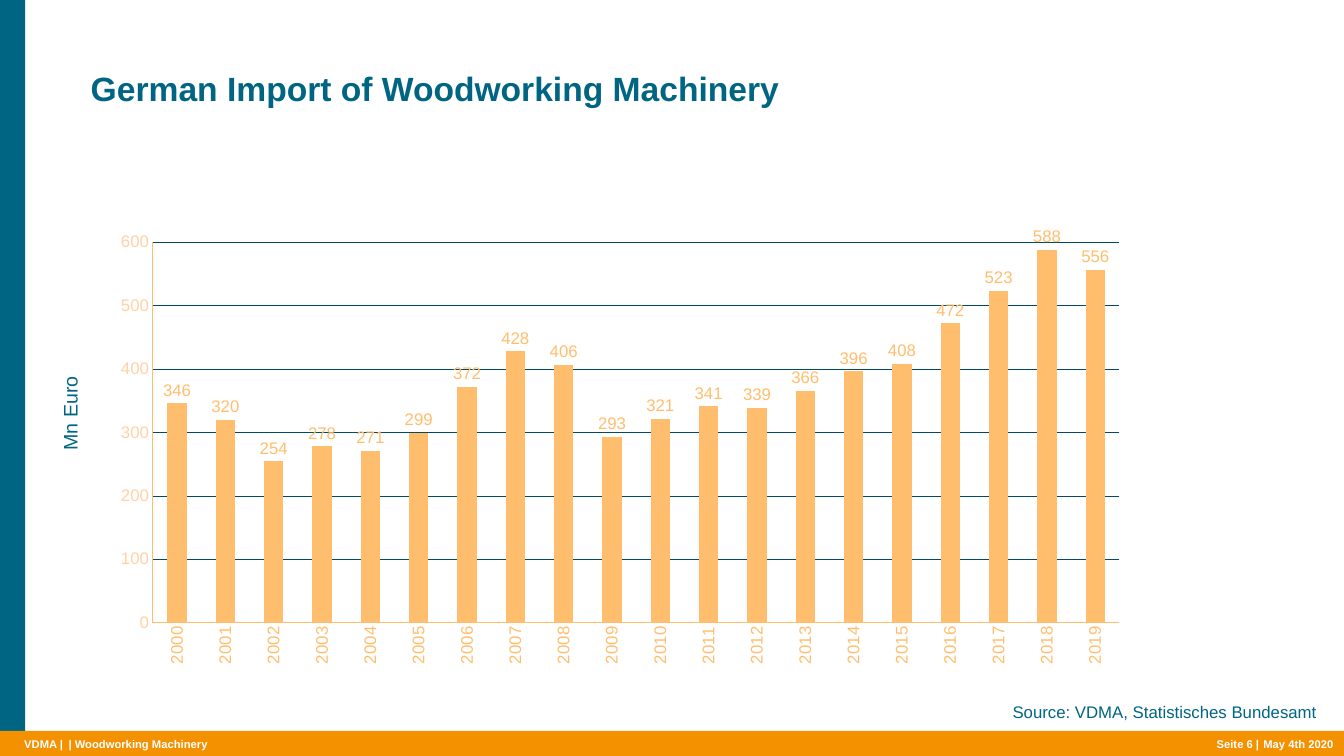
from lxml import etree
from pptx import Presentation
from pptx import util as u
from pptx.chart.data import CategoryChartData
from pptx.dml.color import RGBColor
from pptx.enum import chart as ch, shapes, text
from pptx.oxml import ns

TEAL, ORANGE, LIGHT, WHITE = "006582", "F49100", "FFBE6E", "FFFFFF"
LEFT, CENTER, RIGHT = text.PP_ALIGN.LEFT, text.PP_ALIGN.CENTER, text.PP_ALIGN.RIGHT
TOP, MIDDLE = text.MSO_ANCHOR.TOP, text.MSO_ANCHOR.MIDDLE


def rgb(value):
    return RGBColor.from_string(value)


def add_text(s, box, content, size, color, bold=False, align=LEFT,
             anchor=TOP, inset=0, wrap=True, grow=True):
    sp = s.shapes.add_textbox(*map(u.Inches, box))
    tf = sp.text_frame
    tf.word_wrap = wrap
    tf.auto_size = text.MSO_AUTO_SIZE.SHAPE_TO_FIT_TEXT if grow else text.MSO_AUTO_SIZE.NONE
    tf.vertical_anchor = anchor
    tf.margin_left = tf.margin_right = u.Inches(inset)
    tf.margin_top = tf.margin_bottom = u.Inches(inset / 2)
    p = tf.paragraphs[0]
    p.alignment = align
    r = p.add_run()
    r.text = content
    r.font.name = "Arial"
    r.font.size = u.Pt(size)
    r.font.bold = bold
    r.font.color.rgb = rgb(color)
    return sp


prs = Presentation()
prs.slide_width, prs.slide_height = u.Inches(13.33), u.Inches(7.5)
s = prs.slides.add_slide(prs.slide_layouts[6])

for box, color in [((0, 0, 0.25, 7.5), TEAL), ((0, 7.25, 13.33, 0.25), ORANGE)]:
    sp = s.shapes.add_shape(shapes.MSO_SHAPE.RECTANGLE, *map(u.Inches, box))
    sp.shadow.inherit = False
    sp.fill.solid()
    sp.fill.fore_color.rgb = rgb(color)
    sp.line.fill.background()

add_text(s, (0.9, 0.67, 10.82, 0.81), "German Import of Woodworking Machinery",
         24, TEAL, bold=True, grow=False)

for left, width, content, align, wrap in [
    (0.24, 0.39, "VDMA |", LEFT, False),
    (0.68, 3.85, "| Woodworking Machinery", LEFT, True),
    (12.06, 0.43, "Seite 6 |", RIGHT, False),
    (12.53, 0.78, "May 4th 2020", LEFT, True),
]:
    add_text(s, (left, 7.32, width, 0.13), content, 8, WHITE, bold=True,
             align=align, anchor=MIDDLE, wrap=wrap)

add_text(s, (9.42, 6.91, 3.74, 0.3), "Source: VDMA, Statistisches Bundesamt",
         12, TEAL, align=RIGHT, inset=0.1)
unit = add_text(s, (-0.21, 3.93, 1.81, 0.34), "Mn Euro", 14, TEAL, align=CENTER, inset=0.1)
unit.rotation = 270

data = CategoryChartData(number_format="0")
data.categories = [str(year) for year in range(2000, 2020)]
data.add_series("Series 1", [346, 320, 254, 278, 271, 299, 372, 428, 406, 293,
                             321, 341, 339, 366, 396, 408, 472, 523, 588, 556])
chart = s.shapes.add_chart(
    ch.XL_CHART_TYPE.COLUMN_CLUSTERED, u.Inches(1.1), u.Inches(1.93),
    u.Inches(10.42), u.Inches(4.72), data).chart
chart.has_legend = chart.has_title = False
chart.font.name = "Arial"
chart.font.size = u.Pt(12)
chart.font.color.rgb = rgb(ORANGE)

cat, val = chart.category_axis, chart.value_axis
for axis, color in [(cat, LIGHT), (val, "FFD2A5")]:
    axis.major_tick_mark = axis.minor_tick_mark = ch.XL_TICK_MARK.NONE
    axis.format.line.color.rgb = rgb(LIGHT)
    axis.format.line.width = u.Pt(0.75)
    font = axis.tick_labels.font
    font.name = "Arial"
    font.size = u.Pt(12)
    font.color.rgb = rgb(color)
cat._element.find(ns.qn("c:txPr")).find(ns.qn("a:bodyPr")).set("rot", "-5400000")
val.minimum_scale, val.maximum_scale, val.major_unit = 0, 600, 100
val.tick_labels.number_format = "0"
val.tick_labels.number_format_is_linked = False
val.major_gridlines.format.line.color.rgb = rgb("004C62")
val.major_gridlines.format.line.width = u.Pt(0.25)

plot = chart.plots[0]
plot.gap_width = 150
plot.vary_by_categories = False
bars = plot.series[0]
bars.format.fill.solid()
bars.format.fill.fore_color.rgb = rgb(LIGHT)
labels = bars.data_labels
labels.show_value = True
labels.number_format = "#,##0"
labels.number_format_is_linked = False
labels.position = ch.XL_LABEL_POSITION.OUTSIDE_END
labels.font.name = "Arial"
labels.font.size = u.Pt(12)
labels.font.color.rgb = rgb(LIGHT)

area = chart._chartSpace.chart.plotArea
for old in area.findall(ns.qn("c:layout")):
    area.remove(old)
layout = etree.Element(ns.qn("c:layout"))
manual = etree.SubElement(layout, ns.qn("c:manualLayout"))
for tag, value in [("layoutTarget", "inner"), ("xMode", "edge"), ("yMode", "edge"),
                   ("x", 0.04), ("y", 0.1), ("w", 0.92), ("h", 0.8)]:
    etree.SubElement(manual, ns.qn("c:" + tag)).set("val", str(value))
area.insert(0, layout)

prs.save("out.pptx")
